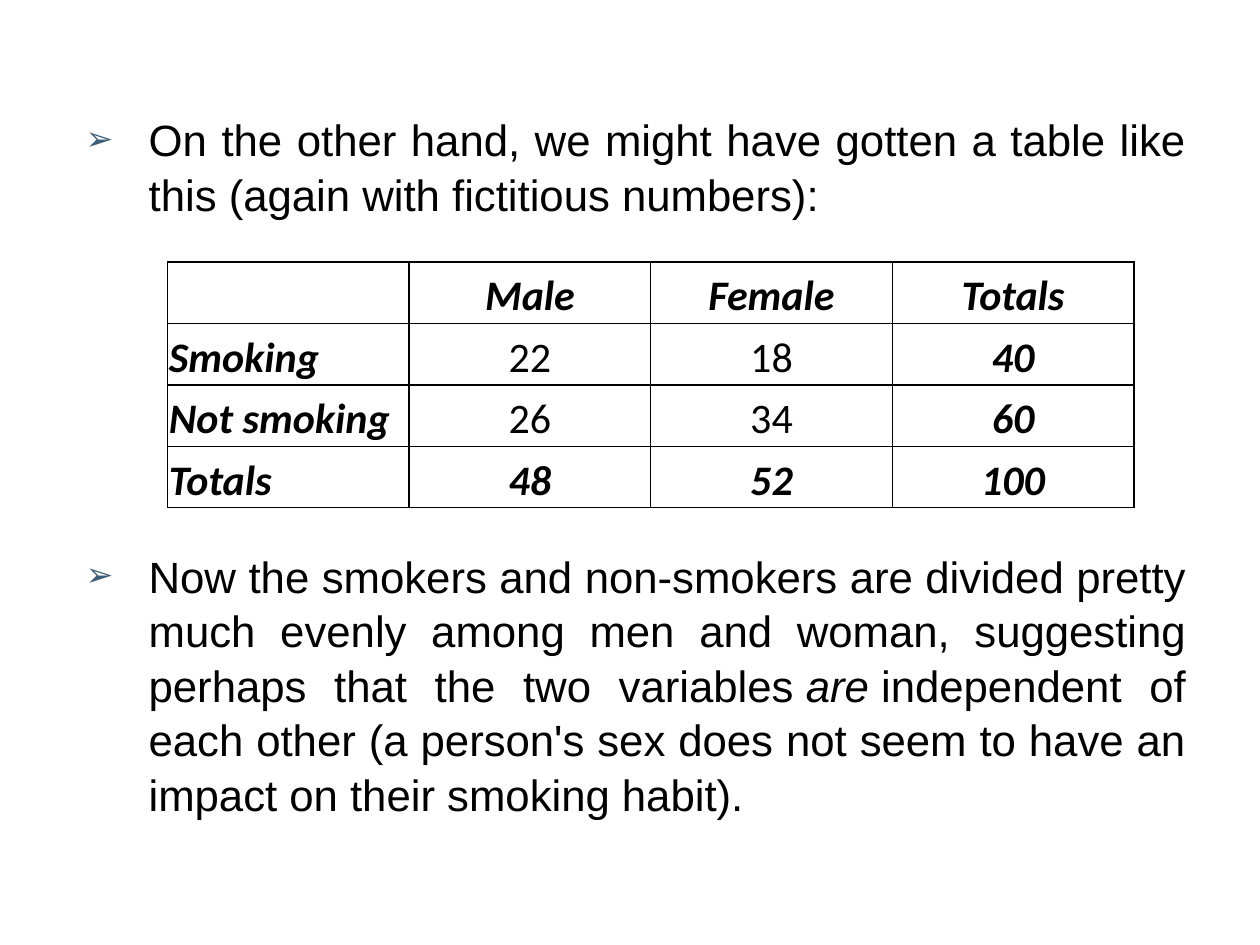
import dataclasses

import lxml.etree
import pptx
import pptx.dml.color
import pptx.enum.text
import pptx.oxml.ns
import pptx.util

Inches = pptx.util.Inches
Pt = pptx.util.Pt
ALIGN = pptx.enum.text.PP_ALIGN


@dataclasses.dataclass(frozen=True)
class Theme:
    """Colours, fonts and type sizes of the slide."""
    ink: str = "000000"
    bullet: str = "3E5D78"
    body_font: str = "Arial"
    table_font: str = "Calibri"
    body_size: float = 25
    table_size: float = 24
    rule_width: float = 1


THEME = Theme()

COUNTS = [
    ["", "Male", "Female", "Totals"],
    ["Smoking", "22", "18", "40"],
    ["Not smoking", "26", "34", "60"],
    ["Totals", "48", "52", "100"],
]

INTRO = [("On the other hand, we might have gotten a table like this "
          "(again with fictitious numbers):", False)]
CONCLUSION = [
    ("Now the smokers and non-smokers are divided pretty much evenly among men "
     "and woman, suggesting perhaps that the two variables\u00a0", False),
    ("are\u00a0", True),
    ("independent of each other (a person's sex does not seem to have an impact "
     "on their smoking habit).", False),
]


def add_child(parent, tag, **attributes):
    """Append a DrawingML element and return it."""
    child = lxml.etree.SubElement(parent, pptx.oxml.ns.qn(tag))
    for key, value in attributes.items():
        child.set(key, str(value))
    return child


def write_text(paragraph, text, font, size, bold=False, italic=False):
    """Add formatted text to a paragraph."""
    run = paragraph.add_run()
    run.text = text
    run.font.name = font
    run.font.size = Pt(size)
    run.font.bold = bold
    run.font.italic = italic
    run.font.color.rgb = pptx.dml.color.RGBColor.from_string(THEME.ink)


def set_bullet(paragraph):
    """Give a paragraph an arrowhead bullet with a hanging indent."""
    properties = paragraph._p.get_or_add_pPr()
    properties.set("marL", str(Inches(0.5)))
    properties.set("indent", str(-Inches(0.5)))
    colour = add_child(properties, "a:buClr")
    add_child(colour, "a:srgbClr", val=THEME.bullet)
    add_child(properties, "a:buSzPct", val=76000)
    add_child(properties, "a:buChar", char="➢")


def set_borders(cell):
    """Draw a thin rule on all sides of a cell."""
    properties = cell._tc.get_or_add_tcPr()
    for side in ("L", "R", "T", "B"):
        line = add_child(properties, f"a:ln{side}", w=Pt(THEME.rule_width))
        fill = add_child(line, "a:solidFill")
        add_child(fill, "a:srgbClr", val=THEME.ink)


def place_discussion(body, left, top, width, height):
    """Fill the body placeholder with two points, leaving room for the table."""
    body.left, body.top, body.width, body.height = left, top, width, height
    frame = body.text_frame
    frame.word_wrap = True
    frame.auto_size = pptx.enum.text.MSO_AUTO_SIZE.NONE
    frame.vertical_anchor = pptx.enum.text.MSO_ANCHOR.TOP
    points = [(frame.paragraphs[0], INTRO, 6), (frame.add_paragraph(), CONCLUSION, 187)]
    for paragraph, parts, gap in points:
        paragraph.alignment = ALIGN.JUSTIFY
        paragraph.line_spacing = 1.04
        paragraph.space_before = Pt(gap)
        paragraph.space_after = Pt(0)
        set_bullet(paragraph)
        for text, italic in parts:
            write_text(paragraph, text, THEME.body_font, THEME.body_size, italic=italic)


def place_counts(slide, left, top, width, height):
    """Add the table of smokers by sex with emphasised labels and totals."""
    last = len(COUNTS) - 1
    table = slide.shapes.add_table(
        len(COUNTS), len(COUNTS[0]), left, top, width, height).table
    table.first_row = False
    table.horz_banding = False
    for row, values in enumerate(COUNTS):
        for column, value in enumerate(values):
            cell = table.cell(row, column)
            set_borders(cell)
            cell.fill.background()
            cell.vertical_anchor = pptx.enum.text.MSO_ANCHOR.MIDDLE
            cell.margin_left = cell.margin_right = Inches(0.01)
            cell.margin_top = cell.margin_bottom = Inches(0.01)
            if not value:
                continue
            paragraph = cell.text_frame.paragraphs[0]
            paragraph.alignment = ALIGN.CENTER if column else ALIGN.LEFT
            paragraph.line_spacing = 1.15
            paragraph.space_after = Pt(10)
            strong = row in (0, last) or column in (0, last)
            write_text(paragraph, value, THEME.table_font, THEME.table_size,
                       bold=strong, italic=strong)


def main():
    """Build and save the slide."""
    deck = pptx.Presentation()
    deck.slide_width, deck.slide_height = Inches(10), Inches(7.5)
    slide = deck.slides.add_slide(deck.slide_layouts[1])
    title = slide.shapes.title._element
    title.getparent().remove(title)
    place_discussion(slide.placeholders[1],
                     Inches(0.58), Inches(0.83), Inches(8.93), Inches(6.15))
    place_counts(slide, Inches(1.33), Inches(2.08), Inches(7.67), Inches(1.92))
    deck.save("out.pptx")


if __name__ == "__main__":
    main()
